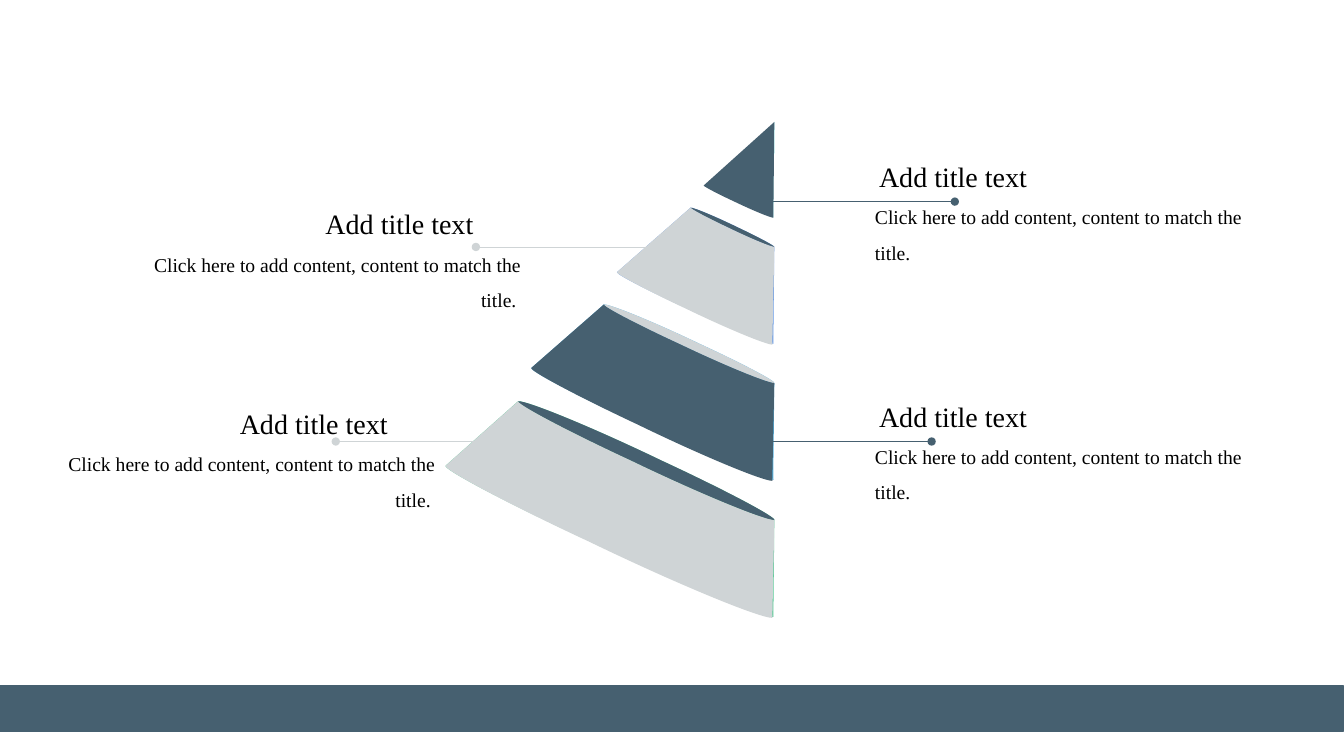
from dataclasses import dataclass
from typing import NamedTuple

from lxml import etree
from pptx import Presentation
from pptx.dml.color import RGBColor
from pptx.enum import shapes, text
from pptx.oxml import ns
from pptx.util import Inches, Pt


@dataclass(frozen=True)
class Theme:
    slate: RGBColor = RGBColor(0x46, 0x60, 0x70)
    mist: RGBColor = RGBColor(0xCF, 0xD4, 0xD6)
    white: RGBColor = RGBColor(0xFF, 0xFF, 0xFF)
    cyan: RGBColor = RGBColor(0x00, 0xFF, 0xFF)
    blue: RGBColor = RGBColor(0x60, 0x96, 0xE6)
    sky: RGBColor = RGBColor(0x58, 0xB6, 0xE5)
    green: RGBColor = RGBColor(0x56, 0xCA, 0x95)
    ink: RGBColor = RGBColor(0, 0, 0)
    font: str = "Times New Roman"
    heading_size: int = 20
    detail_size: int = 14
    leader_width: float = 0.25


class Point(NamedTuple):
    x: float
    y: float


@dataclass(frozen=True)
class Tier:
    crest: Point        # left end of the upper edge
    corner: Point       # left end of the lower edge
    top: Point          # right end of the upper edge
    foot: Point         # right end of the lower edge
    face: RGBColor
    rim: RGBColor
    back: RGBColor


@dataclass(frozen=True)
class Callout:
    heading: Point
    leader_start: Point
    color: RGBColor
    on_left: bool


THEME = Theme()
HEADING = "Add title text"
DETAIL = "Click here to add content, content to match the title."
LEADER_LENGTH = 1.91

TIERS = [
    Tier(Point(7.68, 1.21), Point(6.98, 1.84), Point(7.68, 1.21), Point(7.67, 2.16),
         THEME.slate, THEME.cyan, THEME.white),
    Tier(Point(6.85, 2.06), Point(6.12, 2.70), Point(7.68, 2.45), Point(7.66, 3.42),
         THEME.mist, THEME.slate, THEME.blue),
    Tier(Point(5.99, 3.02), Point(5.27, 3.65), Point(7.68, 3.80), Point(7.66, 4.77),
         THEME.slate, THEME.mist, THEME.sky),
    Tier(Point(5.14, 3.98), Point(4.42, 4.62), Point(7.68, 5.16), Point(7.66, 6.13),
         THEME.mist, THEME.slate, THEME.green),
]

CALLOUTS = [
    Callout(Point(8.62, 1.53), Point(7.56, 2.00), THEME.slate, False),
    Callout(Point(8.62, 3.91), Point(7.33, 4.38), THEME.slate, False),
    Callout(Point(3.13, 2.00), Point(4.72, 2.45), THEME.mist, True),
    Callout(Point(2.28, 3.98), Point(3.33, 4.38), THEME.mist, True),
]

# Near half of a slanted rim in a unit square: two Bezier curves sharing the middle point
UNIT_ARC = [Point(0, 0), Point(-0.01, 0.02), Point(0.18, 0.24), Point(0.44, 0.5),
            Point(0.71, 0.78), Point(0.96, 1), Point(1, 1)]


def near_arc(left: Point, right: Point) -> list[Point]:
    if left == right:
        return [left]
    return [Point(left.x + p.x * (right.x - left.x), left.y + p.y * (right.y - left.y))
            for p in UNIT_ARC]


def far_arc(left: Point, right: Point) -> list[Point]:
    # The far half is the near half turned by half a circle
    return near_arc(right, left)[::-1]


def add_outline(slide, strokes: list[list[Point]], color: RGBColor) -> None:
    """Join strokes by straight lines; a stroke is one point or an arc."""
    points = [(Inches(p.x), Inches(p.y)) for stroke in strokes for p in stroke]
    builder = slide.shapes.build_freeform(*points[0])
    builder.add_line_segments(points[1:], close=True)
    piece = builder.convert_to_shape()
    piece.shadow.inherit = False
    piece.fill.solid()
    piece.fill.fore_color.rgb = color
    piece.line.fill.background()

    # Turn every three steps inside an arc into one curve
    steps = list(piece._element.iter(ns.qn("a:lnTo")))
    position = -1
    for stroke in strokes:
        position += 1
        for _ in range(len(stroke) // 3):
            curve, *handles = steps[position:position + 3]
            curve.tag = ns.qn("a:cubicBezTo")
            for handle in handles:
                curve.append(handle[0])
                handle.getparent().remove(handle)
            position += 3


def add_tier_back(slide, tier: Tier) -> None:
    rear_foot = Point(7.67, tier.foot.y - 0.01)
    add_outline(slide, [far_arc(tier.corner, rear_foot),
                        far_arc(tier.crest, tier.top)[::-1]], tier.back)
    add_outline(slide, [near_arc(tier.corner, rear_foot),
                        far_arc(tier.corner, rear_foot)[::-1]], tier.back)
    if tier.crest == tier.top:
        add_outline(slide, [[tier.top], [tier.foot], [rear_foot]], tier.rim)
    else:
        add_outline(slide, [near_arc(tier.crest, tier.top),
                            far_arc(tier.crest, tier.top)[::-1]], tier.rim)


def add_tier_face(slide, tier: Tier) -> None:
    add_outline(slide, [near_arc(tier.corner, tier.foot),
                        near_arc(tier.crest, tier.top)[::-1]], tier.face)


def add_leader(slide, callout: Callout) -> None:
    start = callout.leader_start
    leader = slide.shapes.add_connector(
        shapes.MSO_CONNECTOR.STRAIGHT, Inches(start.x), Inches(start.y),
        Inches(start.x + LEADER_LENGTH), Inches(start.y))
    leader.line.color.rgb = callout.color
    leader.line.width = Pt(THEME.leader_width)
    outline = leader.line._get_or_add_ln()
    for end in ("a:headEnd", "a:tailEnd"):
        etree.SubElement(outline, ns.qn(end), type="oval")
    etree.SubElement(leader._element.spPr, ns.qn("a:effectLst"))


def add_text(slide, at: Point, width: float, height: float, words: str, size: int,
             align: text.PP_ALIGN, spacing: float = 1.0) -> None:
    box = slide.shapes.add_textbox(Inches(at.x), Inches(at.y), Inches(width), Inches(height))
    frame = box.text_frame
    frame.word_wrap = True
    frame.auto_size = text.MSO_AUTO_SIZE.SHAPE_TO_FIT_TEXT
    paragraph = frame.paragraphs[0]
    paragraph.text = words
    paragraph.alignment = align
    paragraph.line_spacing = spacing
    paragraph.font.name = THEME.font
    paragraph.font.size = Pt(size)
    paragraph.font.color.rgb = THEME.ink


def add_callout(slide, callout: Callout) -> None:
    at = callout.heading
    add_text(slide, at, 2.06, 0.44, HEADING, THEME.heading_size, text.PP_ALIGN.JUSTIFY)
    shift = -1.99 if callout.on_left else -0.04
    add_text(slide, Point(at.x + shift, at.y + 0.34), 4.13, 0.76,
             DETAIL + " " if callout.on_left else DETAIL, THEME.detail_size,
             text.PP_ALIGN.RIGHT if callout.on_left else text.PP_ALIGN.LEFT, 1.5)


def add_footer_band(slide) -> None:
    band = slide.shapes.add_shape(shapes.MSO_SHAPE.RECTANGLE, Inches(-0.03), Inches(6.8),
                                  Inches(13.35), Inches(0.46))
    band.shadow.inherit = False
    band.fill.solid()
    band.fill.fore_color.rgb = THEME.slate
    band.line.color.rgb = THEME.slate
    band.line.width = Pt(1)


def main() -> None:
    deck = Presentation()
    deck.slide_width, deck.slide_height = Inches(13.33), Inches(7.5)
    slide = deck.slides.add_slide(deck.slide_layouts[6])

    add_footer_band(slide)
    # Leaders run between the backs and the faces of the pyramid
    for tier in TIERS:
        add_tier_back(slide, tier)
    for callout in CALLOUTS:
        add_leader(slide, callout)
    for tier in TIERS:
        add_tier_face(slide, tier)
    for callout in CALLOUTS:
        add_callout(slide, callout)

    deck.save("out.pptx")


if __name__ == "__main__":
    main()
